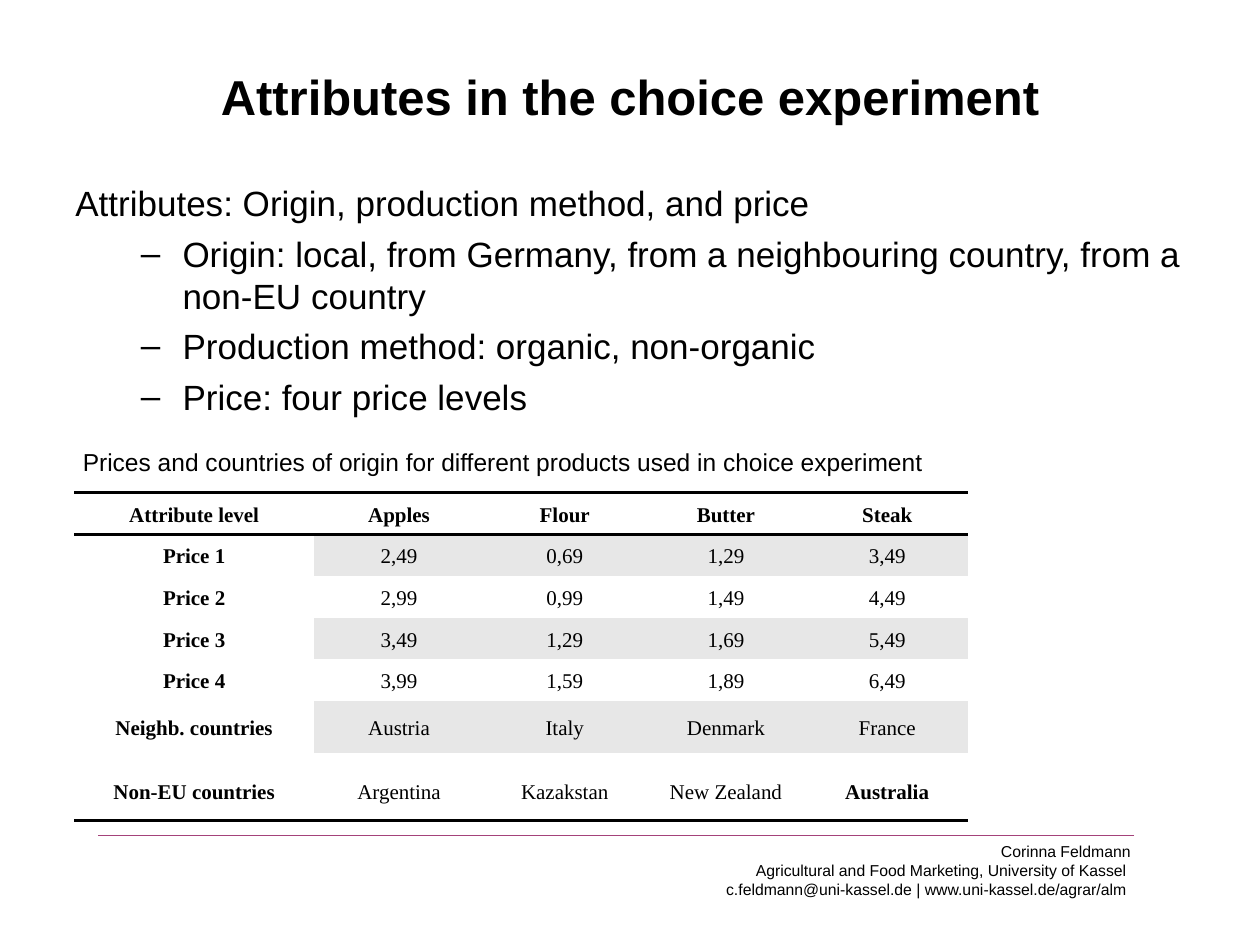
from lxml.etree import SubElement
from pptx import Presentation
from pptx.dml.color import RGBColor
from pptx.enum.shapes import MSO_CONNECTOR
from pptx.enum.text import MSO_ANCHOR, MSO_AUTO_SIZE, PP_ALIGN
from pptx.oxml.ns import qn
from pptx.util import Cm, Pt

BLACK, WHITE, GREY, PLUM = "000000", "FFFFFF", "E7E7E7", "A4427A"
ITEMS = [
    "Origin: local, from Germany, from a neighbouring country, from a non-EU country",
    "Production method: organic, non-organic",
    "Price: four price levels",
]
CAPTION = "Prices and countries of origin for different products used in choice experiment"
ROWS = [
    ["Attribute level", "Apples", "Flour", "Butter", "Steak"],
    ["Price 1", "2,49", "0,69", "1,29", "3,49"],
    ["Price 2", "2,99", "0,99", "1,49", "4,49"],
    ["Price 3", "3,49", "1,29", "1,69", "5,49"],
    ["Price 4", "3,99", "1,59", "1,89", "6,49"],
    ["Neighb. countries", "Austria", "Italy", "Denmark", "France"],
    ["Non-EU countries", "Argentina", "Kazakstan", "New Zealand", "Australia"],
]
COLUMN_WIDTHS = [4.83, 3.43, 3.25, 3.25, 3.25]
ROW_HEIGHTS = [0.84] * 5 + [1.04, 1.37]
RULED_EDGES = {0, 1, len(ROWS)}


def colour(value):
    return RGBColor.from_string(value)


def add_span(para, text, size, bold=False, name="Arial"):
    span = para.add_run()
    span.text = text
    span.font.name = name
    span.font.size = Pt(size)
    span.font.bold = bold
    span.font.color.rgb = colour(BLACK)


def indent(para, margin, first=0, bullet=None):
    properties = para._p.get_or_add_pPr()
    properties.set("marL", str(Cm(margin)))
    properties.set("indent", str(Cm(first)))
    if bullet:
        SubElement(properties, qn("a:buFont"), typeface="Arial")
        SubElement(properties, qn("a:buChar"), char=bullet)


def add_text_frame(page, left, top, width, height):
    box = page.shapes.add_textbox(Cm(left), Cm(top), Cm(width), Cm(height))
    box.text_frame.word_wrap = True
    return box.text_frame


def place_title(page, left, top, width, height):
    title = page.shapes.title
    title.left, title.top = Cm(left), Cm(top)
    title.width, title.height = Cm(width), Cm(height)
    frame = title.text_frame
    frame.auto_size = MSO_AUTO_SIZE.NONE
    frame.vertical_anchor = MSO_ANCHOR.MIDDLE
    para = frame.paragraphs[0]
    para.alignment = PP_ALIGN.CENTER
    add_span(para, "Attributes in the choice experiment", 28, bold=True)


def add_body(page, left, top, width, height):
    frame = add_text_frame(page, left, top, width, height)
    add_span(frame.paragraphs[0], "Attributes: Origin, production method, and price", 20)
    for item in ITEMS:
        para = frame.add_paragraph()
        para.level = 1
        indent(para, 2.16, -0.84, "–")
        para.space_before = Pt(5)
        add_span(para, item, 20)
    para = frame.add_paragraph()
    indent(para, 0.15)
    para.space_before = Pt(17)
    add_span(para, CAPTION, 14)


def set_border(cell, side, ruled=False):
    width = Pt(2) if ruled else 0
    line = SubElement(cell._tc.get_or_add_tcPr(), qn("a:ln" + side), w=str(width))
    if ruled:
        fill = SubElement(line, qn("a:solidFill"))
        SubElement(fill, qn("a:srgbClr"), val=BLACK)
    else:
        SubElement(line, qn("a:noFill"))


def format_cell(cell, text, row, column):
    last_row, last_column = len(ROWS) - 1, len(COLUMN_WIDTHS) - 1
    set_border(cell, "L")
    set_border(cell, "R")
    set_border(cell, "T", row in RULED_EDGES)
    set_border(cell, "B", row + 1 in RULED_EDGES)
    cell.fill.solid()
    cell.fill.fore_color.rgb = colour(GREY if row % 2 and column else WHITE)
    cell.vertical_anchor = MSO_ANCHOR.MIDDLE
    cell.margin_left = cell.margin_right = Cm(0.13)
    cell.margin_top = cell.margin_bottom = 0
    para = cell.text_frame.paragraphs[0]
    para.alignment = PP_ALIGN.CENTER
    para.line_spacing = 1.5 if row == last_row else 1.15
    bold = row == 0 or column == 0 or (row, column) == (last_row, last_column)
    add_span(para, text, 12, bold, "Times New Roman")


def add_price_table(page, left, top):
    table = page.shapes.add_table(
        len(ROWS), len(COLUMN_WIDTHS), Cm(left), Cm(top),
        Cm(sum(COLUMN_WIDTHS)), Cm(sum(ROW_HEIGHTS))).table
    table.horz_banding = False
    table.first_row = False
    for column, width in zip(table.columns, COLUMN_WIDTHS):
        column.width = Cm(width)
    for row, height in zip(table.rows, ROW_HEIGHTS):
        row.height = Cm(height)
    for row, texts in enumerate(ROWS):
        for column, text in enumerate(texts):
            format_cell(table.cell(row, column), text, row, column)


def add_footer(page, left, top, width, height):
    rule = page.shapes.add_connector(
        MSO_CONNECTOR.STRAIGHT, Cm(left + width), Cm(top), Cm(left), Cm(top))
    rule.line.color.rgb = colour(PLUM)
    rule.line.width = Pt(0.75)
    SubElement(rule._element.spPr, qn("a:effectLst"))
    text_width = 9.78
    frame = add_text_frame(page, left + width + 0.18 - text_width, top, text_width, height)
    author, contact = frame.paragraphs[0], frame.add_paragraph()
    author.alignment = contact.alignment = PP_ALIGN.RIGHT
    add_span(author, "Corinna Feldmann", 9)
    add_span(contact, "Agricultural and Food Marketing, University of Kassel ", 9)
    contact.add_line_break()
    add_span(contact, "c.feldmann@uni-kassel.de | www.uni-kassel.de/agrar/alm ", 9)


def main():
    deck = Presentation()
    deck.slide_width, deck.slide_height = Cm(25.4), Cm(19.05)
    page = deck.slides.add_slide(deck.slide_layouts[5])
    add_footer(page, 1.98, 16.84, 20.88, 1.42)
    place_title(page, 1.27, 0.76, 22.86, 2.36)
    add_body(page, 1.27, 3.53, 22.86, 6.71)
    add_price_table(page, 1.5, 9.93)
    deck.save("out.pptx")


if __name__ == "__main__":
    main()
